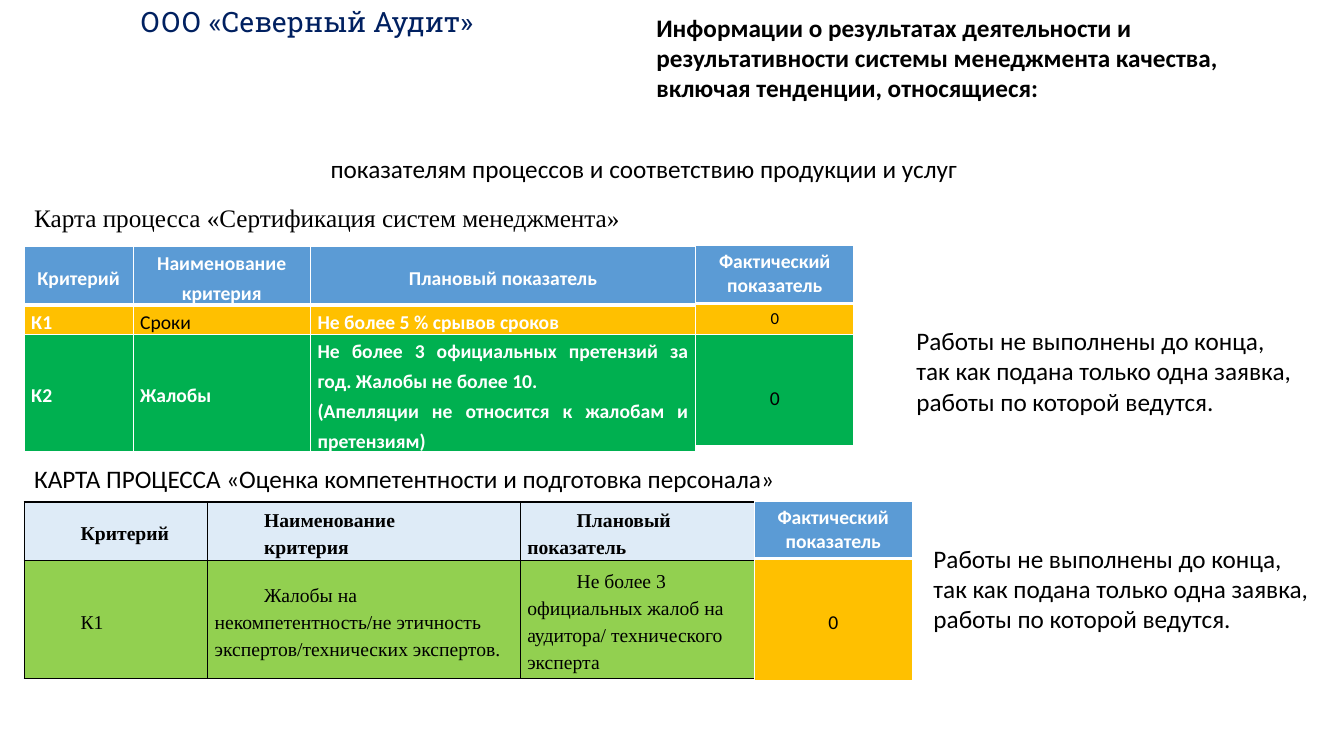
from lxml.etree import SubElement
from pptx import Presentation
from pptx.dml.color import RGBColor
from pptx.enum.text import MSO_ANCHOR, MSO_AUTO_SIZE, PP_ALIGN
from pptx.oxml.ns import qn
from pptx.util import Inches, Pt

UNIT = Inches(0.1)
WHITE = RGBColor(0xFF, 0xFF, 0xFF)
BLACK = RGBColor(0, 0, 0)
NAVY = RGBColor(0x00, 0x20, 0x60)
BLUE = RGBColor(0x5B, 0x9B, 0xD5)
PALE_BLUE = RGBColor(0xDE, 0xEB, 0xF7)
AMBER = RGBColor(0xFF, 0xC0, 0x00)
GREEN = RGBColor(0x00, 0xB0, 0x50)
LIME = RGBColor(0x92, 0xD0, 0x50)

BODY = {"name": "Calibri", "size": Pt(18), "bold": False}
HEADING = BODY | {"bold": True}
SERIF = BODY | {"name": "Times New Roman"}
COMPANY = BODY | {"name": "Roboto Slab", "size": Pt(20)}
CELL = BODY | {"size": Pt(14)}
CELL_BOLD = CELL | {"bold": True}
CELL_SMALL = CELL | {"size": Pt(12)}
CELL_SERIF = SERIF | {"size": Pt(14)}
CELL_SERIF_BOLD = CELL_SERIF | {"bold": True}

THIN = {"lnL": 1, "lnR": 1, "lnT": 1, "lnB": 1}
THICK_BOTTOM = THIN | {"lnB": 3}
PADDING = {"margin_left": Inches(0.07), "margin_right": Inches(0.07),
           "margin_top": 0, "margin_bottom": 0, "vertical_anchor": MSO_ANCHOR.MIDDLE}
LOWERED = {"margin_top": Inches(0.52)}
CENTERED = {"alignment": PP_ALIGN.CENTER}
CENTERED_LOOSE = CENTERED | {"line_spacing": 1.25}
JUSTIFIED = {"alignment": PP_ALIGN.JUSTIFY, "line_spacing": 1.25}
LOOSE = {"line_spacing": 1.25}
NOTE = ("Работы не выполнены до конца,\nтак как подана только одна заявка,\n"
        "работы по которой ведутся.")


def apply(target, values):
    """Set every attribute of a format dict on the target."""
    for name, value in values.items():
        setattr(target, name, value)


def grid(*lengths):
    """Turn grid columns and rows into slide lengths."""
    return [round(length * UNIT) for length in lengths]


def write(frame, text, font, color, layout, indent=0):
    """Write one paragraph per line of text."""
    for index, line in enumerate(text.split("\n")):
        para = frame.add_paragraph() if index else frame.paragraphs[0]
        apply(para, layout)
        if indent:
            para._p.get_or_add_pPr().set("indent", str(indent))
        span = para.add_run()
        span.text = line
        apply(span.font, font)
        span.font.color.rgb = color


def add_title(page, box, text):
    """Place the slide title in its box."""
    title = page.shapes.title
    apply(title, dict(zip(("left", "top", "width", "height"), grid(*box))))
    apply(title.text_frame, {"word_wrap": True, "auto_size": MSO_AUTO_SIZE.NONE,
                             "vertical_anchor": MSO_ANCHOR.TOP})
    write(title.text_frame, text, HEADING, BLACK, {"alignment": PP_ALIGN.LEFT})


def add_label(page, box, text, font=BODY, color=BLACK, wrap=False):
    """Place text in its box."""
    frame = page.shapes.add_textbox(*grid(*box)).text_frame
    frame.word_wrap = wrap
    write(frame, text, font, color, {"alignment": PP_ALIGN.LEFT})


def add_borders(cell, color, widths):
    """Draw the four edges of a cell."""
    properties = cell._tc.get_or_add_tcPr()
    for index, (side, width) in enumerate(widths.items()):
        line = SubElement(properties, qn(f"a:{side}"), w=str(Pt(width)))
        fill = SubElement(line, qn("a:solidFill"))
        SubElement(fill, qn("a:srgbClr"), val=str(color))
        properties.insert(index, line)


def add_grid_table(page, corner, columns, rows, cells, border):
    """Build a table from its corner, column widths, row heights and cell rows."""
    size = (sum(columns), sum(rows))
    table = page.shapes.add_table(len(rows), len(columns), *grid(*corner, *size)).table
    apply(table, {"first_row": False, "horz_banding": False})
    for column, width in zip(table.columns, grid(*columns)):
        column.width = width
    for row, height, (row_style, entries) in zip(table.rows, grid(*rows), cells):
        row.height = height
        for cell, (text, font, color) in zip(row.cells, entries):
            apply(cell, row_style["cell"])
            cell.fill.solid()
            cell.fill.fore_color.rgb = row_style["fill"]
            add_borders(cell, border, row_style["edges"])
            write(cell.text_frame, text, font, color, row_style["layout"],
                  row_style["indent"])


def row(fill, layout, entries, cell=PADDING, edges=THIN, indent=0):
    """Describe a table row."""
    style = {"fill": fill, "layout": layout, "cell": cell, "edges": edges, "indent": indent}
    return style, entries


def add_certification(page, corner):
    """Build the plan table of the certification process."""
    add_grid_table(page, corner, (10.8, 17.6, 38.2), (5.8, 2.9, 11.6), [
        row(BLUE, CENTERED_LOOSE, [(text, CELL_BOLD, WHITE) for text in (
            "Критерий", "Наименование\nкритерия", "Плановый показатель")],
            edges=THICK_BOTTOM),
        row(AMBER, JUSTIFIED, [("К1", CELL_BOLD, WHITE), ("Сроки", CELL, BLACK),
                               ("Не более 5 % срывов сроков", CELL_BOLD, WHITE)]),
        row(GREEN, JUSTIFIED, [(text, CELL_BOLD, WHITE) for text in (
            "К2", "Жалобы",
            "Не более 3 официальных претензий за год. Жалобы не более 10.\n"
            "(Апелляции не относится к жалобам и претензиям)")]),
    ], WHITE)


def add_competence(page, corner):
    """Build the plan table of the competence process."""
    indent = Inches(0.49)
    add_grid_table(page, corner, (18.2, 31, 23.2), (5.8, 11.7), [
        row(PALE_BLUE, LOOSE, [(text, CELL_SERIF_BOLD, BLACK) for text in (
            "Критерий", "Наименование\nкритерия", "Плановый показатель")], indent=indent),
        row(LIME, LOOSE, [(text, CELL_SERIF, BLACK) for text in (
            "К1",
            "Жалобы на некомпетентность/не этичность экспертов/технических экспертов.",
            "Не более 3 официальных жалоб на аудитора/ технического эксперта")],
            indent=indent),
    ], BLACK)


def add_actuals(page, corner, rows, results):
    """Build a one-column table of actual results."""
    header = row(BLUE, CENTERED, [("Фактический показатель", CELL_BOLD, WHITE)],
                 {}, THICK_BOTTOM)
    body = [row(fill, CENTERED, [("0", font, BLACK)], cell) for fill, font, cell in results]
    add_grid_table(page, corner, (15.7,), rows, [header, *body], WHITE)


def main():
    """Build and save the deck."""
    deck = Presentation()
    apply(deck, {"slide_width": Inches(13.33), "slide_height": Inches(7.5)})
    page = deck.slides.add_slide(deck.slide_layouts[5])
    add_title(page, (64.1, 0.7, 66.7, 10.1),
              "Информации о результатах деятельности и результативности системы "
              "менеджмента качества, включая тенденции, относящиеся:")
    add_label(page, (13, 0, 35.9, 4.4), "ООО «Северный Аудит»", COMPANY, NAVY)
    add_label(page, (31.8, 14.7, 64.9, 4),
              "показателям процессов и соответствию продукции и услуг")
    add_label(page, (2.4, 19.6, 60.7, 4),
              "Карта процесса «Сертификация систем менеджмента»", SERIF)
    add_certification(page, (2.4, 24.4))
    add_actuals(page, (69, 24.3), (5.8, 3.1, 11),
                [(AMBER, CELL_SMALL, {}), (GREEN, CELL, LOWERED)])
    add_label(page, (89.9, 31.8, 40.2, 10.1), NOTE)
    add_label(page, (2.4, 45.5, 119, 4),
              "КАРТА ПРОЦЕССА «Оценка компетентности и подготовка персонала»", wrap=True)
    add_competence(page, (2.4, 49.8))
    add_actuals(page, (74.8, 49.7), (5.7, 12.1), [(AMBER, CELL, LOWERED)])
    add_label(page, (91.6, 53.4, 40.2, 10.1), NOTE)
    deck.save("out.pptx")


if __name__ == "__main__":
    main()
